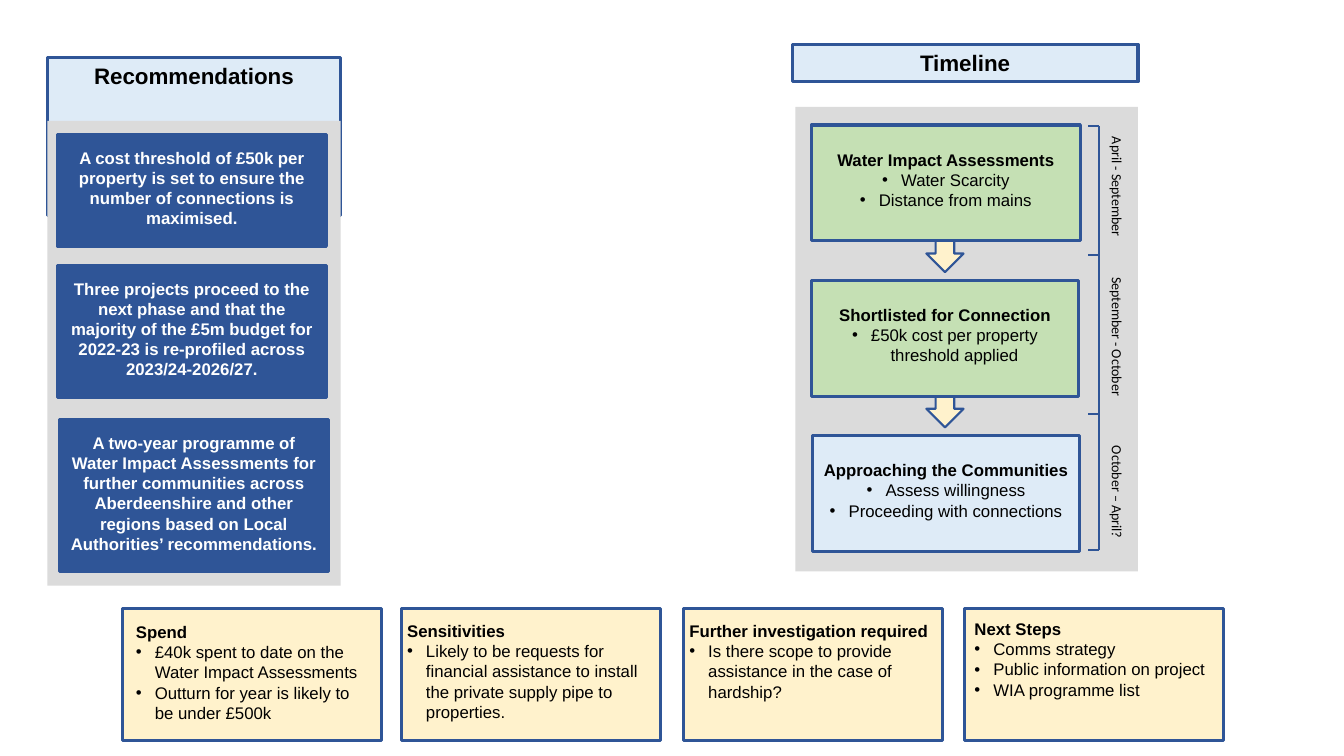
from lxml import etree
from pptx import Presentation
from pptx.dml.color import RGBColor
from pptx.enum.shapes import MSO_CONNECTOR, MSO_SHAPE
from pptx.enum.text import MSO_ANCHOR, PP_ALIGN
from pptx.oxml.ns import qn
from pptx.util import Pt

COLORS = {"navy": "2F5597", "pale": "DEEBF7", "grey": "DBDBDB", "cream": "FFF2CC",
          "green": "C5E0B4", "black": "000000", "white": "FFFFFF"}

HEADERS = [("Recommendations", 33.8, 41, 209.5, 113),
           ("Timeline", 565.9, 31.7, 247, 26.6)]
PANELS = [(33.8, 86.4, 209.5, 331.9), (568.1, 76.3, 244.8, 331.9)]
CARDS = [
    ("A cost threshold of £50k per property is set to ensure the number of connections is maximised.",
     41, 95.8, 79.9),
    ("Three projects proceed to the next phase and that the majority of the £5m budget for 2022-23 "
     "is re-profiled across 2023/24-2026/27.", 41, 189.4, 94.3),
    ("A two-year programme of Water Impact Assessments for further communities across Aberdeenshire "
     "and other regions based on Local Authorities’ recommendations.", 42.5, 299.5, 108.7),
]
NOTES = [
    ("Spend", ["£40k spent to date on the Water Impact Assessments",
               "Outturn for year is likely to be under £500k"], 87.8, 90, 440.6, 176.4),
    ("Sensitivities", ["Likely to be requests for financial assistance to install the private "
                       "supply pipe to properties."], 286.6, 283.7, 439.9, 193),
    ("Further investigation required", ["Is there scope to provide assistance in the case of hardship?"],
     488.2, 485.3, 439.9, 193),
    ("Next Steps", ["Comms strategy", "Public information on project", "WIA programme list"],
     689, 689, 438.5, 193),
]
STAGES = [
    ("Water Impact Assessments", ["Water Scarcity", "Distance from mains"], "green", 579.6, 192.2),
    ("Shortlisted for Connection", ["£50k cost per property threshold applied"], "green", 579.6, 191),
    ("Approaching the Communities", ["Assess willingness", "Proceeding with connections"],
     "pale", 580.3, 191),
]
STAGE_TOP, STAGE_PITCH, STAGE_H = 89.3, 110.9, 82.8
PERIODS = [("April - September", 134.3, 87.1), ("September - October", 243.7, 105.8),
           ("October – April?", 356.8, 90.7)]
PERIOD_X, PERIOD_H = 798.1, 19.4
TICKS = [90, 182.2, 295.9, 393.1]
TICK_X, SPINE_X = 777.2, 784.8

prs = Presentation()
prs.slide_width, prs.slide_height = Pt(960), Pt(540)
s = prs.slides.add_slide(prs.slide_layouts[6])


def rgb(name):
    return RGBColor.from_string(COLORS[name])


def add_box(x, y, w, h, fill, weight=2.25, kind=MSO_SHAPE.RECTANGLE):
    sp = s.shapes.add_shape(kind, Pt(x), Pt(y), Pt(w), Pt(h))
    sp.shadow.inherit = False
    sp.fill.solid()
    sp.fill.fore_color.rgb = rgb(fill)
    if weight:
        sp.line.color.rgb = rgb("navy")
        sp.line.width = Pt(weight)
    else:
        sp.line.fill.background()
    return sp


def add_line(x1, y1, x2, y2):
    ln = s.shapes.add_connector(MSO_CONNECTOR.STRAIGHT, Pt(x1), Pt(y1), Pt(x2), Pt(y2))
    ln.line.color.rgb = rgb("navy")
    ln.line.width = Pt(1.5)
    etree.SubElement(ln._element.spPr, qn("a:effectLst"))


def add_bullet(p):
    pPr = p._p.get_or_add_pPr()
    pPr.set("marL", str(Pt(13.5)))
    pPr.set("indent", str(-Pt(13.5)))
    etree.SubElement(pPr, qn("a:buFont")).set("typeface", "Arial")
    etree.SubElement(pPr, qn("a:buChar")).set("char", "•")


def write(sp, head, items=(), size=12, color="black", font="Arial", bold=True,
          align=PP_ALIGN.CENTER, top=3.6, wrap=True):
    tf = sp.text_frame
    tf.word_wrap = wrap
    tf.vertical_anchor = MSO_ANCHOR.TOP
    tf.margin_top = Pt(top)
    for i, text in enumerate([head, *items]):
        p = tf.add_paragraph() if i else tf.paragraphs[0]
        p.alignment = align
        if i:
            add_bullet(p)
        r = p.add_run()
        r.text = text
        r.font.name = font
        r.font.size = Pt(size)
        r.font.bold = bold and i == 0
        r.font.color.rgb = rgb(color)


for title, x, y, w, h in HEADERS:
    write(add_box(x, y, w, h, "pale"), title, size=16)

for panel in PANELS:
    add_box(*panel, "grey", weight=0)

for text, x, y, h in CARDS:
    write(add_box(x, y, 192.2, h, "navy"), text, color="white", top=9.5)

for head, items, x, text_x, text_y, text_w in NOTES:
    add_box(x, 434.9, 185, 94.3, "cream")
    tb = s.shapes.add_textbox(Pt(text_x), Pt(text_y), Pt(text_w), Pt(80))
    write(tb, head, items, align=PP_ALIGN.LEFT)

for i in range(len(STAGES) - 1):
    add_box(661.7, 149.8 + i * STAGE_PITCH, 26.6, 44.6, "cream", 1.5, MSO_SHAPE.DOWN_ARROW)

for i, (head, items, fill, x, w) in enumerate(STAGES):
    sp = add_box(x, STAGE_TOP + i * STAGE_PITCH, w, STAGE_H, fill)
    write(sp, head, items, top=17.4)

add_line(SPINE_X, TICKS[0], SPINE_X, TICKS[-1])
for y in TICKS:
    add_line(TICK_X, y, SPINE_X, y)

for text, mid, w in PERIODS:
    tb = s.shapes.add_textbox(Pt(PERIOD_X - w / 2), Pt(mid - PERIOD_H / 2), Pt(w), Pt(PERIOD_H))
    tb.rotation = 90
    write(tb, text, size=10, font="Calibri", bold=False, align=PP_ALIGN.LEFT, wrap=False)

prs.save("out.pptx")
